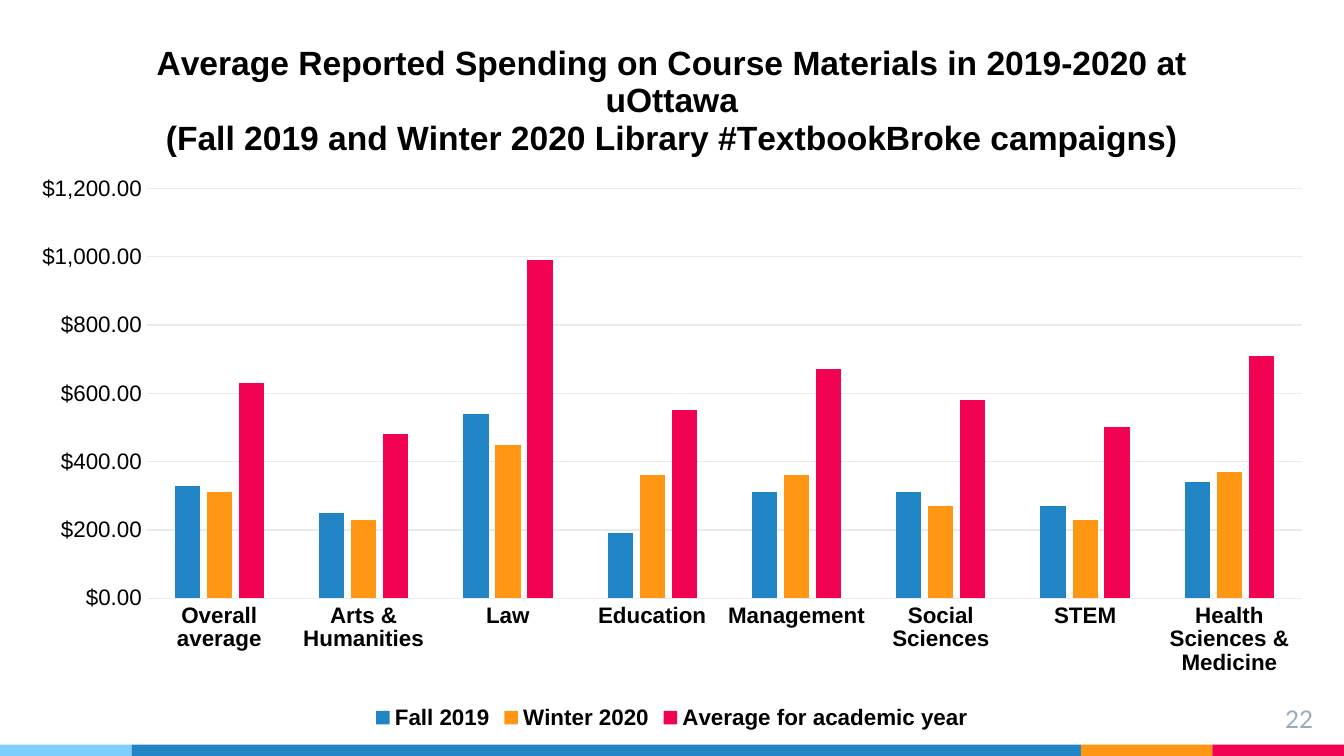
from lxml import etree
from pptx import Presentation
from pptx.chart.data import CategoryChartData as ChartData
from pptx.dml.color import RGBColor
from pptx.enum.chart import XL_CHART_TYPE as ChartType
from pptx.enum.chart import XL_LEGEND_POSITION as LegendPosition
from pptx.enum.chart import XL_TICK_MARK as TickMark
from pptx.enum.shapes import MSO_SHAPE as Shape
from pptx.enum.text import PP_ALIGN as Align
from pptx.oxml.ns import qn
from pptx.util import Pt

COLOURS = {
    "sky": "7ECEFD", "blue": "2185C5", "orange": "FF9715", "red": "F20253",
    "text": "000000", "grid": "E8EAEC", "number": "97ABBC", "chart": "677480",
}
PAGE_WIDTH, PAGE_HEIGHT = 720, 405
STRIPE_HEIGHT = 6
STRIPES = [("sky", 70.5), ("blue", 508.5), ("orange", 70.5), ("red", 70.5)]
TITLE = [
    "Average Reported Spending on Course Materials in 2019-2020 at uOttawa",
    "(Fall 2019 and Winter 2020 Library #TextbookBroke campaigns)",
]
CATEGORIES = [
    "Overall average", "Arts & Humanities", "Law", "Education", "Management",
    "Social Sciences", "STEM", "Health Sciences & Medicine",
]
SERIES = [
    ("Fall 2019", "blue", [330, 250, 540, 190, 310, 310, 270, 340]),
    ("Winter 2020", "orange", [310, 230, 450, 360, 360, 270, 230, 370]),
    ("Average for academic year", "red",
     [630, 480, 990, 550, 670, 580, 500, 710]),
]
PLOT_AREA = {"x": 0.1, "y": 0.24, "w": 0.88, "h": 0.57}


def colour(name):
    return RGBColor.from_string(COLOURS[name])


def style_font(font, size, name="text", bold=False, family="Arial"):
    font.size = Pt(size)
    font.bold = bold
    font.name = family
    font.color.rgb = colour(name)


def style_line(line):
    line.color.rgb = colour("grid")
    line.width = Pt(0.75)


def add_stripes(page):
    left = 0
    for name, width in STRIPES:
        stripe = page.shapes.add_shape(
            Shape.RECTANGLE, Pt(left), Pt(PAGE_HEIGHT - STRIPE_HEIGHT),
            Pt(width), Pt(STRIPE_HEIGHT))
        stripe.shadow.inherit = False
        stripe.fill.solid()
        stripe.fill.fore_color.rgb = colour(name)
        stripe.line.fill.background()
        left += width


def add_page_number(page, number):
    box = page.shapes.add_textbox(Pt(667.5), Pt(370), Pt(43), Pt(24.5))
    frame = box.text_frame
    frame.word_wrap = True
    frame.margin_top = frame.margin_bottom = Pt(7.2)
    frame.text = number
    para = frame.paragraphs[0]
    para.alignment = Align.RIGHT
    style_font(para.runs[0].font, 13, "number", family="Lato")


def place_plot(chart):
    plot_area = chart._chartSpace.chart.plotArea
    for old_layout in plot_area.findall(qn("c:layout")):
        plot_area.remove(old_layout)
    layout = etree.Element(qn("c:layout"))
    manual = etree.SubElement(layout, qn("c:manualLayout"))
    settings = [("layoutTarget", "inner"), ("xMode", "edge"), ("yMode", "edge")]
    for tag, value in settings + list(PLOT_AREA.items()):
        etree.SubElement(manual, qn(f"c:{tag}")).set("val", str(value))
    plot_area.insert(0, layout)


def style_title(chart):
    chart.has_title = True
    frame = chart.chart_title.text_frame
    frame.text = "\n".join(TITLE)
    for para in frame.paragraphs:
        para.alignment = Align.CENTER
        for span in para.runs:
            style_font(span.font, 18, bold=True)
    chart.chart_title.include_in_layout = False


def style_axes(chart):
    for axis, bold in ((chart.category_axis, True), (chart.value_axis, False)):
        axis.major_tick_mark = axis.minor_tick_mark = TickMark.NONE
        style_font(axis.tick_labels.font, 12, bold=bold)
    style_line(chart.category_axis.format.line)
    values = chart.value_axis
    values.minimum_scale, values.maximum_scale = 0, 1200
    values.major_unit = 200
    values.format.line.fill.background()
    values.has_major_gridlines = True
    style_line(values.major_gridlines.format.line)
    values.tick_labels.number_format = '"$"#,##0.00'
    values.tick_labels.number_format_is_linked = False


def style_bars(chart):
    plot = chart.plots[0]
    plot.gap_width = 219
    plot.overlap = -27
    plot.vary_by_categories = False
    for series, (_, name, _) in zip(plot.series, SERIES):
        series.format.fill.solid()
        series.format.fill.fore_color.rgb = colour(name)
        series.invert_if_negative = False


def style_legend(chart):
    chart.has_legend = True
    chart.legend.position = LegendPosition.BOTTOM
    chart.legend.include_in_layout = False
    style_font(chart.legend.font, 12, bold=True)


def add_spending_chart(page):
    data = ChartData(number_format='"$"#,##0.00')
    data.categories = CATEGORIES
    for label, _, values in SERIES:
        data.add_series(label, values)
    chart = page.shapes.add_chart(
        ChartType.COLUMN_CLUSTERED, Pt(8.6), Pt(8.6), Pt(702.8), Pt(385.2),
        data).chart
    style_font(chart.font, 10, "chart")
    style_title(chart)
    style_axes(chart)
    style_bars(chart)
    style_legend(chart)
    place_plot(chart)


def main():
    deck = Presentation()
    deck.slide_width, deck.slide_height = Pt(PAGE_WIDTH), Pt(PAGE_HEIGHT)
    page = deck.slides.add_slide(deck.slide_layouts[6])
    add_stripes(page)
    add_page_number(page, "22")
    add_spending_chart(page)
    deck.save("out.pptx")


if __name__ == "__main__":
    main()
